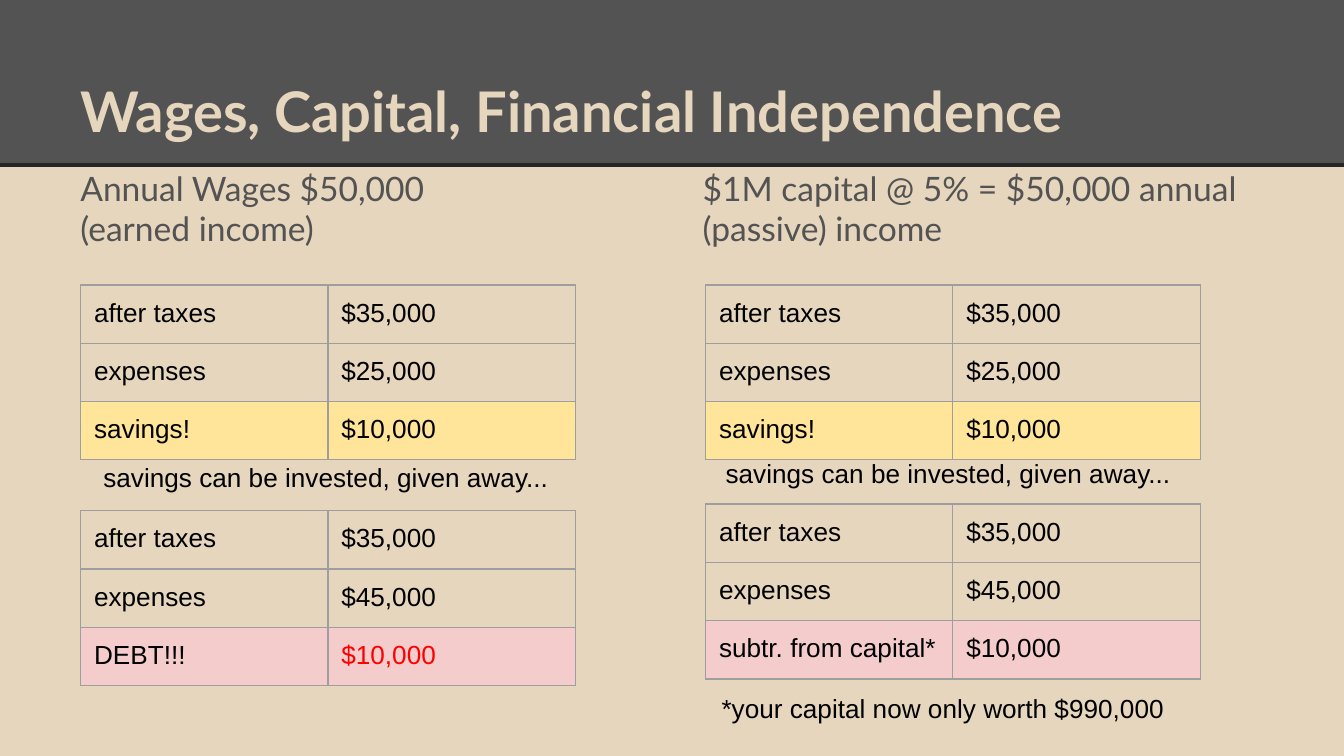
from lxml.etree import SubElement
from pptx import Presentation
from pptx.dml.color import RGBColor
from pptx.enum.shapes import MSO_CONNECTOR as Connector, MSO_SHAPE as Shape
from pptx.enum.text import MSO_ANCHOR as Anchor
from pptx.oxml.ns import qn
from pptx.util import Inches, Pt

SAND, GREY, BLACK, RED = "E6D6BD", "535353", "000000", "FF0000"
YELLOW, PINK, RULE, BORDER = "FFE599", "F4CCCC", "262626", "9E9E9E"

TITLE = {"name": "Lato", "size": Pt(30), "bold": True}
HEADING = {"name": "Lato", "size": Pt(18), "bold": False}
BODY = {"name": "Arial", "size": Pt(14), "bold": False}
SPACING = {"line_spacing": 1.0, "space_before": Pt(0), "space_after": Pt(0)}
INSETS = {f"margin_{side}": Inches(0.1)
          for side in ("left", "right", "top", "bottom")}

COLUMN_WIDTH, ROW_HEIGHT = 1.84, 0.32
SAVINGS_NOTE = "savings can be invested, given away..."


def color(value):
    return RGBColor.from_string(value)


def apply(target, values):
    for name, value in values.items():
        setattr(target, name, value)


def paint(fill, value):
    fill.solid()
    fill.fore_color.rgb = color(value)


def write(frame, lines, style, text_color):
    for number, line in enumerate(lines):
        para = frame.paragraphs[0] if number == 0 else frame.add_paragraph()
        apply(para, SPACING)
        span = para.add_run()
        span.text = line
        apply(span.font, style)
        span.font.color.rgb = color(text_color)
        # The paragraph mark takes the font of its text
        mark = SubElement(para._p, qn("a:endParaRPr"), sz=str(int(style["size"].pt * 100)))
        SubElement(mark, qn("a:latin"), typeface=style["name"])


def add_text(page, bounds, lines, style, text_color, anchor=Anchor.TOP):
    box = page.shapes.add_textbox(*map(Inches, bounds))
    apply(box.text_frame, {"word_wrap": True, "vertical_anchor": anchor, **INSETS})
    write(box.text_frame, lines, style, text_color)


def add_header(page, width, height):
    band = page.shapes.add_shape(
        Shape.RECTANGLE, 0, 0, Inches(width), Inches(height))
    band.shadow.inherit = False
    paint(band.fill, GREY)
    band.line.fill.background()

    rule = page.shapes.add_connector(
        Connector.STRAIGHT, 0, Inches(height), Inches(width), Inches(height))
    rule.line.color.rgb = color(RULE)
    rule.line.width = Pt(2.25)
    SubElement(rule.element.spPr, qn("a:effectLst"))


def add_borders(cell):
    properties = cell._tc.get_or_add_tcPr()
    for position, side in enumerate(("lnL", "lnR", "lnT", "lnB")):
        line = properties.makeelement(qn(f"a:{side}"), {"w": str(Pt(0.75))})
        fill = SubElement(line, qn("a:solidFill"))
        SubElement(fill, qn("a:srgbClr"), val=BORDER)
        properties.insert(position, line)


def add_budget(page, left, top, expenses, result, highlight, result_color=BLACK):
    rows = [("after taxes", "$35,000"), ("expenses", expenses),
            (result, "$10,000")]
    table = page.shapes.add_table(
        len(rows), 2, Inches(left), Inches(top),
        Inches(2 * COLUMN_WIDTH), Inches(len(rows) * ROW_HEIGHT)).table
    apply(table, {"first_row": False, "horz_banding": False})
    for r, row in enumerate(rows):
        is_result = r == len(rows) - 1
        for c, text in enumerate(row):
            cell = table.cell(r, c)
            apply(cell, INSETS)
            if is_result:
                paint(cell.fill, highlight)
            else:
                cell.fill.background()
            text_color = result_color if is_result and c == 1 else BLACK
            write(cell.text_frame, [text], BODY, text_color)
            add_borders(cell)


def main():
    deck = Presentation()
    apply(deck, {"slide_width": Inches(10), "slide_height": Inches(10 * 9 / 16)})
    page = deck.slides.add_slide(deck.slide_layouts[6])
    paint(page.background.fill, SAND)

    # Header and title
    add_header(page, 10, 1.23)
    add_text(page, (0.5, 0.23, 9, 0.94),
             ["Wages, Capital, Financial Independence"], TITLE, SAND, Anchor.BOTTOM)

    # Column headings
    add_text(page, (0.5, 1.15, 4.37, 4.07),
             ["Annual Wages $50,000", "(earned income)"], HEADING, GREY)
    add_text(page, (5.13, 1.15, 4.37, 4.07),
             ["$1M capital @ 5% = $50,000 annual (passive) income"], HEADING, GREY)

    # Budgets that leave savings
    for left in (0.6, 5.25):
        add_budget(page, left, 2.12, "$25,000", "savings!", YELLOW)

    # Budgets that overspend
    add_budget(page, 0.6, 3.8, "$45,000", "DEBT!!!", PINK, RED)
    add_budget(page, 5.25, 3.75, "$45,000", "subtr. from capital*", PINK)

    # Notes
    for bounds, note in (
            ((0.67, 3.33, 3.55, 0.2), SAVINGS_NOTE),
            ((5.3, 3.34, 3.62, 0.16), SAVINGS_NOTE),
            ((5.27, 5.09, 3.68, 0.16), "*your capital now only worth $990,000")):
        add_text(page, bounds, [note], BODY, BLACK)

    deck.save("out.pptx")


if __name__ == "__main__":
    main()
